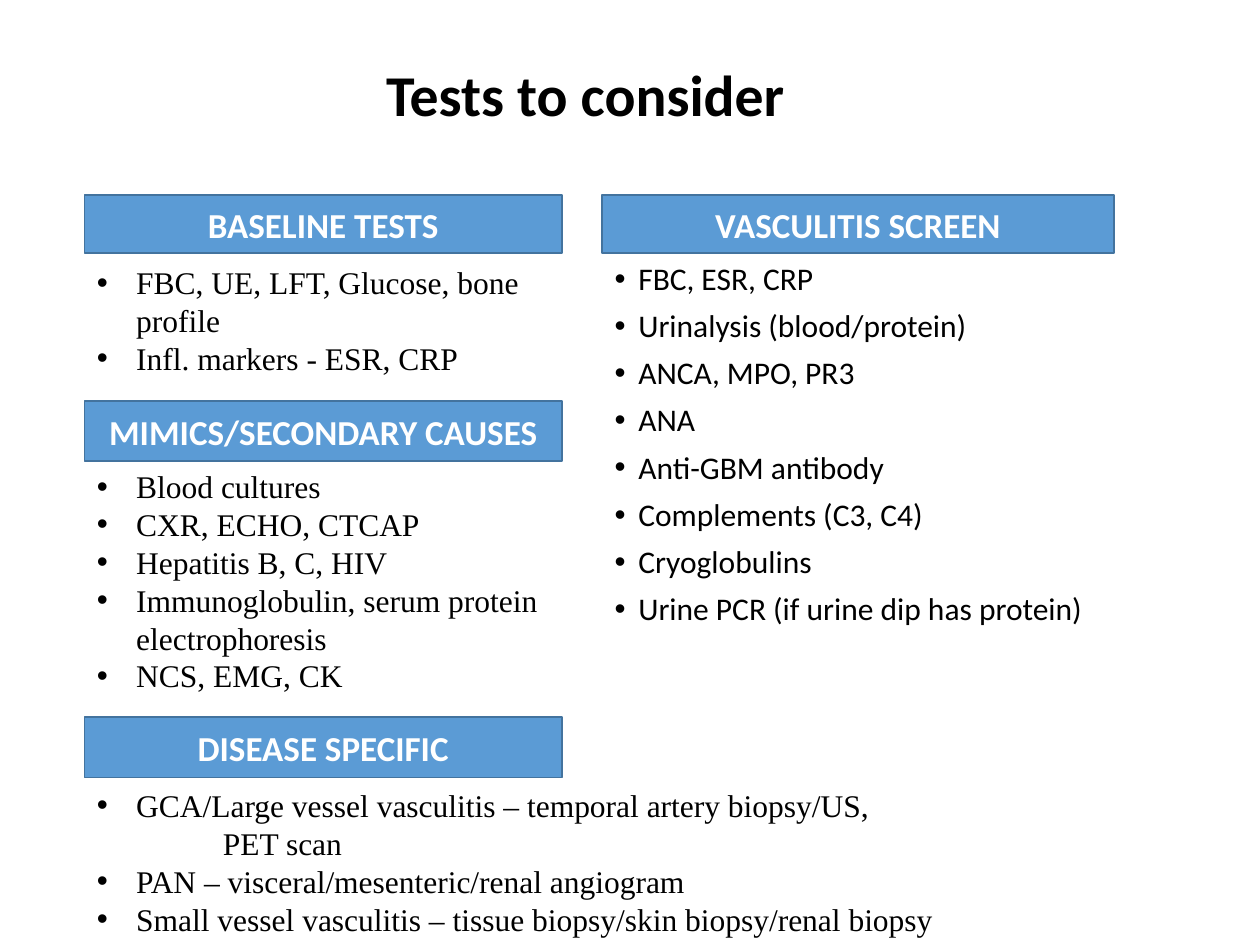
from dataclasses import dataclass

from lxml import etree
from pptx import Presentation
from pptx.dml.color import RGBColor
from pptx.enum import shapes, text
from pptx.oxml import ns
from pptx.util import Pt


@dataclass(frozen=True)
class Theme:
    ink: RGBColor = RGBColor(0, 0, 0)
    paper: RGBColor = RGBColor(255, 255, 255)
    fill: RGBColor = RGBColor(0x5B, 0x9B, 0xD5)
    edge: RGBColor = RGBColor(0x43, 0x73, 0x9E)
    sans: str = "Calibri"
    serif: str = "Times New Roman"
    title: int = 33
    head: int = 20
    body: int = 18


THEME = Theme()
LEFT, RIGHT = 48.25, 344.2
NARROW, MEDIUM, WIDE = 272.9, 292.3, 588.25


def style(run, face, size, color, bold=False):
    font = run.font
    font.name, font.size, font.bold = face, Pt(size), bold
    font.color.rgb = color


def bullet(par, indent, mark=True):
    """Indent a paragraph, hanging a bullet before it if mark is set."""
    props = par._p.get_or_add_pPr()
    props.set("marL", str(Pt(indent)))
    props.set("indent", str(Pt(-indent) if mark else 0))
    if mark:
        etree.SubElement(props, ns.qn("a:buFont")).set("typeface", "Arial")
        etree.SubElement(props, ns.qn("a:buChar")).set("char", "•")
    else:
        etree.SubElement(props, ns.qn("a:buNone"))


def title(slide, box, words):
    shape = slide.shapes.title
    shape.left, shape.top, shape.width, shape.height = map(Pt, box)
    frame = shape.text_frame
    frame.auto_size = text.MSO_AUTO_SIZE.NONE
    frame.word_wrap = True
    frame.vertical_anchor = text.MSO_ANCHOR.MIDDLE
    frame.margin_right = Pt(10)
    par = frame.paragraphs[0]
    par.alignment = text.PP_ALIGN.CENTER
    par.line_spacing = 0.9
    run = par.add_run()
    run.text = words
    style(run, THEME.sans, THEME.title, THEME.ink, True)


def header(slide, box, words):
    shape = slide.shapes.add_shape(shapes.MSO_SHAPE.RECTANGLE, *map(Pt, box))
    shape.shadow.inherit = False
    shape.fill.solid()
    shape.fill.fore_color.rgb = THEME.fill
    shape.line.color.rgb = THEME.edge
    shape.line.width = Pt(1)
    frame = shape.text_frame
    frame.word_wrap = True
    frame.vertical_anchor = text.MSO_ANCHOR.MIDDLE
    par = frame.paragraphs[0]
    par.alignment = text.PP_ALIGN.CENTER
    run = par.add_run()
    run.text = words
    style(run, THEME.sans, THEME.head, THEME.paper, True)


def listing(slide, box, items, face, indent=22.5, line=None, gap=0):
    """Place a bullet list; an item in a tuple goes on in unmarked lines."""
    frame = slide.shapes.add_textbox(*map(Pt, box)).text_frame
    frame.word_wrap = True
    lines = []
    for item in items:
        first, *more = item if isinstance(item, tuple) else (item,)
        lines.append((first, True))
        lines += [(words, False) for words in more]
    for i, (words, mark) in enumerate(lines):
        par = frame.add_paragraph() if i else frame.paragraphs[0]
        if line:
            par.line_spacing = line
        if i and gap:
            par.space_before = Pt(gap)
        bullet(par, indent if mark else 72, mark)
        run = par.add_run()
        run.text = words
        style(run, face, THEME.body, THEME.ink)


def main():
    deck = Presentation()
    deck.slide_width, deck.slide_height = Pt(720), Pt(540)
    slide = deck.slides.add_slide(deck.slide_layouts[5])

    title(slide, (36, 21.6, 599.8, 69.1), "Tests to consider")

    header(slide, (LEFT, 111.6, NARROW, 33.1), "BASELINE TESTS")
    listing(slide, (LEFT, 146.9, NARROW, 72.7), [
        "FBC, UE, LFT, Glucose, bone profile",
        "Infl. markers - ESR, CRP",
    ], THEME.serif)

    header(slide, (RIGHT, 111.6, MEDIUM, 33.1), "VASCULITIS SCREEN")
    listing(slide, (RIGHT, 146.9, MEDIUM, 269.3), [
        "FBC, ESR, CRP",
        "Urinalysis (blood/protein)",
        "ANCA, MPO, PR3",
        "ANA",
        "Anti-GBM antibody",
        "Complements (C3, C4)",
        "Cryoglobulins",
        "Urine PCR (if urine dip has protein)",
    ], THEME.sans, indent=13.5, line=0.9, gap=7.5)

    header(slide, (LEFT, 229, NARROW, 34.6), "MIMICS/SECONDARY CAUSES")
    listing(slide, (LEFT, 263.5, NARROW, 138.2), [
        "Blood cultures",
        "CXR, ECHO, CTCAP",
        "Hepatitis B, C, HIV",
        "Immunoglobulin, serum protein electrophoresis",
        "NCS, EMG, CK",
    ], THEME.serif)

    header(slide, (LEFT, 409.7, NARROW, 34.6), "DISEASE SPECIFIC")
    listing(slide, (LEFT, 445.7, WIDE, 94.3), [
        ("GCA/Large vessel vasculitis – temporal artery biopsy/US,", "PET scan"),
        "PAN – visceral/mesenteric/renal angiogram",
        "Small vessel vasculitis – tissue biopsy/skin biopsy/renal biopsy",
    ], THEME.serif)

    deck.save("out.pptx")


if __name__ == "__main__":
    main()
